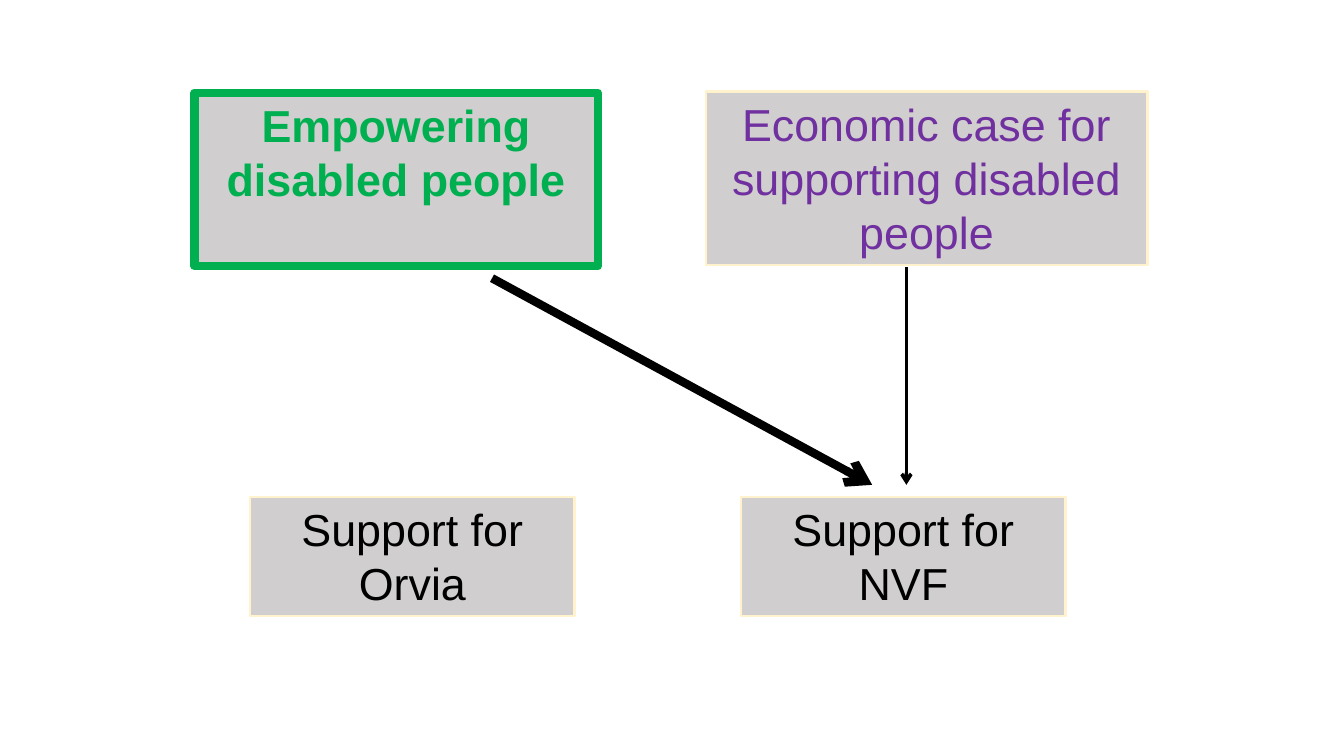
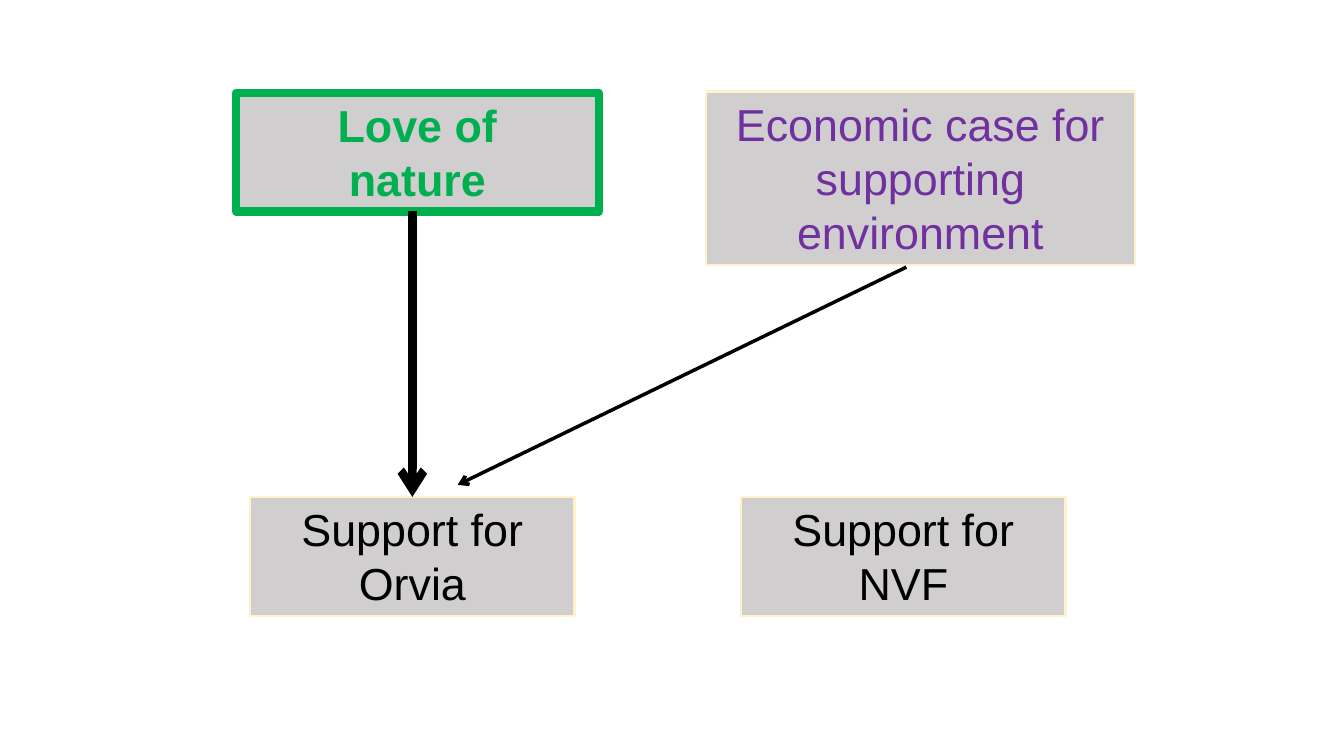
from dataclasses import dataclass

from lxml.etree import SubElement
from pptx import Presentation
from pptx.dml.color import RGBColor as Rgb
from pptx.enum.shapes import MSO_CONNECTOR as Link, MSO_SHAPE as Kind
from pptx.enum.text import MSO_ANCHOR as Anchor, MSO_AUTO_SIZE as Fit, PP_ALIGN as Align
from pptx.oxml.ns import qn
from pptx.util import Inches, Pt

COLORS = {
    "fill": "D0CECE",
    "edge": "FFF2CC",
    "green": "00B050",
    "purple": "7030A0",
    "black": "000000",
}
FONT = "Arial"
THIN, THICK = 2.5, 6
TOP = 0


@dataclass(frozen=True)
class Box:
    text: str
    left: float
    top: float
    width: float
    height: float
    ink: str = "black"
    edge: str = "edge"
    weight: float = 1.75
    bold: bool = False


@dataclass(frozen=True)
class Arrow:
    start: tuple[float, float]
    end: tuple[float, float]
    weight: float
    goal: Box | None = None


def value(text: str, left: float, top: float, width: float, height: float) -> Box:
    return Box(text, left, top, width, height, "green", "green", THICK, True)


def reason(text: str, width: float) -> Box:
    return Box(text, 7, 0.91, width, 1.72, "purple")


def cause(name: str, left: float) -> Box:
    return Box(f"Support for {name}", left, 4.93, 3.22, 1.18)


def color(name: str) -> Rgb:
    return Rgb.from_string(COLORS[name])


def write(frame, text: str, *, ink: str, bold: bool = False, size: float = 32) -> None:
    frame.word_wrap = True
    frame.auto_size = Fit.SHAPE_TO_FIT_TEXT
    frame.vertical_anchor = Anchor.TOP
    frame.text = text
    for para in frame.paragraphs:
        para.alignment = Align.CENTER
        for run in para.runs:
            font = run.font
            font.name, font.size, font.bold = FONT, Pt(size), bold
            font.color.rgb = color(ink)


def draw_box(slide, box: Box):
    area = map(Inches, (box.left, box.top, box.width, box.height))
    shape = slide.shapes.add_shape(Kind.RECTANGLE, *area)
    shape.shadow.inherit = False
    shape.fill.solid()
    shape.fill.fore_color.rgb = color("fill")
    shape.line.color.rgb = color(box.edge)
    shape.line.width = Pt(box.weight)
    SubElement(shape.line._get_or_add_ln(), qn("a:round"))
    write(shape.text_frame, box.text, ink=box.ink, bold=box.bold)
    return shape


def draw_arrow(slide, arrow: Arrow, shapes: dict) -> None:
    ends = map(Inches, (*arrow.start, *arrow.end))
    line = slide.shapes.add_connector(Link.STRAIGHT, *ends)
    if arrow.goal:
        line.end_connect(shapes[arrow.goal], TOP)
    line.line.color.rgb = color("black")
    line.line.width = Pt(arrow.weight)
    SubElement(line.line._get_or_add_ln(), qn("a:tailEnd"), type="arrow")
    SubElement(line._element.spPr, qn("a:effectLst"))


CAUSES = (cause("Orvia", 2.48), cause("NVF", 7.35))
FROM_REASON = (8.99, 2.65)
SLIDES = (
    (
        (value("Empowering disabled people", 1.93, 0.92, 4, 1.72),
         reason("Economic case for supporting disabled people", 4.38)),
        (Arrow(FROM_REASON, (8.99, 4.81), THIN),
         Arrow((4.88, 2.76), (8.65, 4.81), THICK)),
    ),
    (
        (value("Love of\nnature", 2.34, 0.92, 3.6, 1.18),
         reason("Economic case for supporting environment", 4.26)),
        (Arrow(FROM_REASON, (4.54, 4.81), THIN),
         Arrow((4.09, 2.09), (4.09, 4.93), THICK, CAUSES[0])),
    ),
)


def main() -> None:
    deck = Presentation()
    deck.slide_width, deck.slide_height = Inches(13.33), Inches(7.5)
    for motives, arrows in SLIDES:
        slide = deck.slides.add_slide(deck.slide_layouts[6])
        shapes = {box: draw_box(slide, box) for box in motives + CAUSES}
        for arrow in arrows:
            draw_arrow(slide, arrow, shapes)
    deck.save("out.pptx")


if __name__ == "__main__":
    main()
